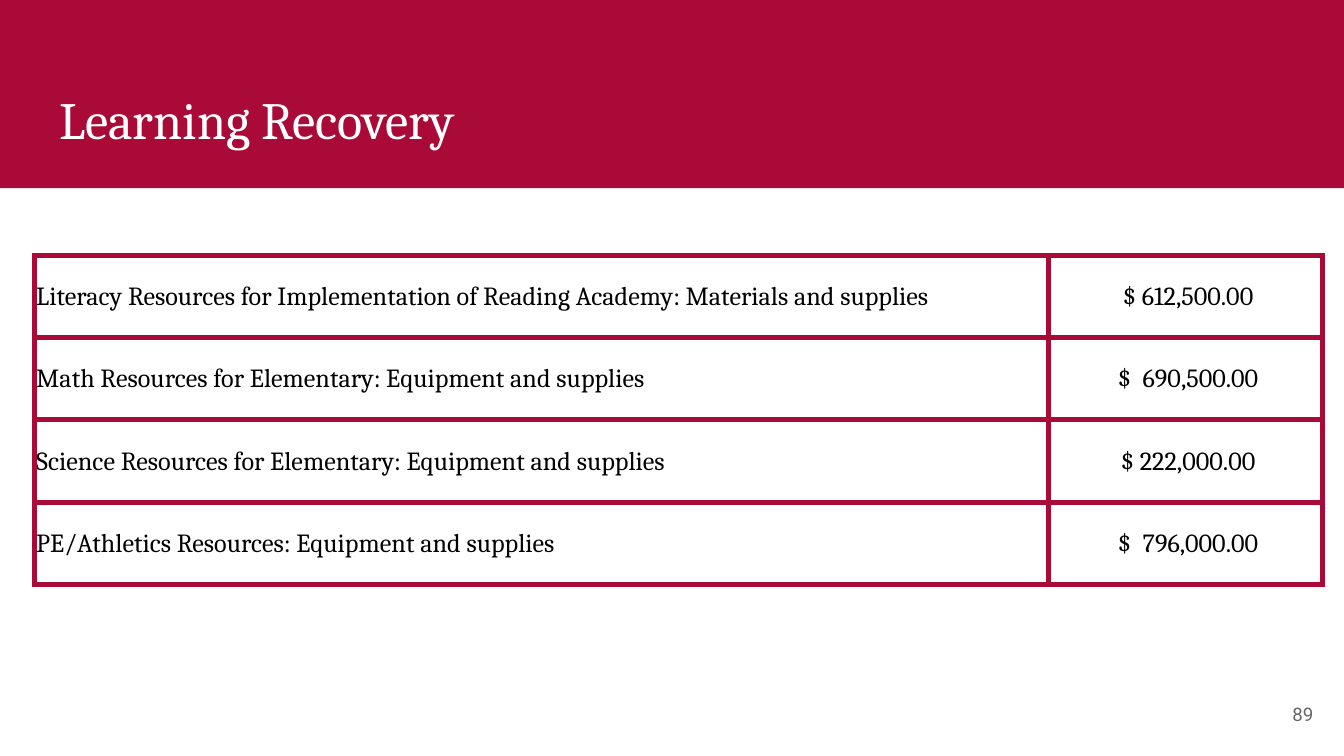
"""Build the Learning Recovery budget slide."""
from lxml import etree
from pptx import Presentation
from pptx.dml.color import RGBColor
from pptx.enum.shapes import MSO_SHAPE
from pptx.enum.text import MSO_ANCHOR, PP_ALIGN
from pptx.oxml.ns import qn
from pptx.util import Inches, Pt

RECT = MSO_SHAPE.RECTANGLE
MIDDLE = MSO_ANCHOR.MIDDLE
LEFT, CENTER, RIGHT = PP_ALIGN.LEFT, PP_ALIGN.CENTER, PP_ALIGN.RIGHT

RED, WHITE, BLACK, GRAY = "AA0A38", "FFFFFF", "000000", "666666"
TITLE = "Learning Recovery"
PAGE = "89"
COSTS = [
    ("Literacy Resources for Implementation of Reading Academy: Materials and supplies", " $ 612,500.00"),
    ("Math Resources for Elementary: Equipment and supplies", " $  690,500.00"),
    ("Science Resources for Elementary: Equipment and supplies", " $ 222,000.00"),
    ("PE/Athletics Resources: Equipment and supplies ", " $  796,000.00"),
]
WIDTHS = [7.54, 2.04]
ALIGNS = [LEFT, CENTER]
WIDE = Inches(10)
TALL = WIDE * 9 // 16
DEPTH = Inches(2.45)


def color(code):
    return RGBColor.from_string(code)


def write(frame, text, size=14, font="Cambria", ink=BLACK, align=LEFT):
    frame.word_wrap = True
    para = frame.paragraphs[0]
    para.alignment = align
    run = para.add_run()
    run.text = text
    run.font.size = Pt(size)
    run.font.name = font
    run.font.color.rgb = color(ink)


def inset(frame, size):
    frame.margin_left = frame.margin_right = Inches(size)
    frame.margin_top = frame.margin_bottom = Inches(size)
    frame.vertical_anchor = MIDDLE


def border(cell, ink, width):
    props = cell._tc.get_or_add_tcPr()
    for spot, side in enumerate(("lnL", "lnR", "lnT", "lnB")):
        line = etree.Element(qn(f"a:{side}"), w=str(Pt(width)))
        fill = etree.SubElement(line, qn("a:solidFill"))
        etree.SubElement(fill, qn("a:srgbClr"), val=ink)
        props.insert(spot, line)


def add_head(slide):
    title = slide.shapes.title
    title.left, title.top = Inches(0.34), Inches(0.54)
    title.width, title.height = Inches(9.32), Inches(0.68)
    inset(title.text_frame, 0.1)
    write(title.text_frame, TITLE, size=28, ink=WHITE)

    band = slide.shapes.add_shape(RECT, 0, 0, WIDE, Inches(1.4))
    band.shadow.inherit = False
    band.fill.solid()
    band.fill.fore_color.rgb = color(RED)
    band.line.fill.background()
    title.element.addprevious(band.element)


def add_costs(slide):
    frame = slide.shapes.add_table(
        len(COSTS), len(WIDTHS), Inches(0.26), Inches(1.9),
        Inches(sum(WIDTHS)), DEPTH)
    table = frame.table
    table.first_row = table.horz_banding = False
    for col, width in zip(table.columns, WIDTHS):
        col.width = Inches(width)
    for row, texts in zip(table.rows, COSTS):
        row.height = DEPTH // len(COSTS)
        for cell, text, align in zip(row.cells, texts, ALIGNS):
            cell.fill.background()
            inset(cell, 0.01)
            cell.margin_bottom = 0
            write(cell.text_frame, text, align=align)
            border(cell, RED, 3)


def add_page(slide):
    box = slide.shapes.add_textbox(Inches(9.27), Inches(5.1), Inches(0.6), Inches(0.43))
    inset(box.text_frame, 0.1)
    write(box.text_frame, PAGE, size=10, font="Roboto", ink=GRAY, align=RIGHT)


def main():
    deck = Presentation()
    deck.slide_width, deck.slide_height = WIDE, TALL
    slide = deck.slides.add_slide(deck.slide_layouts[5])
    add_head(slide)
    add_costs(slide)
    add_page(slide)
    deck.save("out.pptx")


if __name__ == "__main__":
    main()
